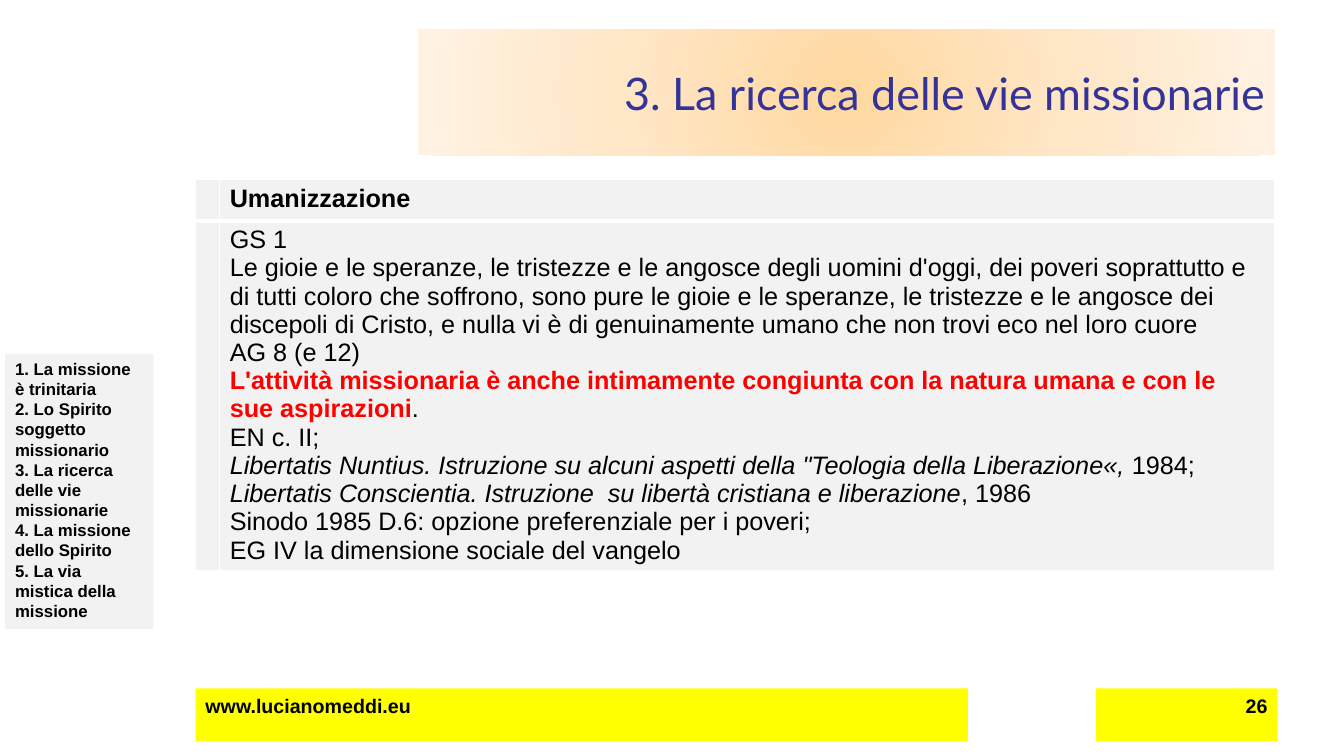
from dataclasses import dataclass

from lxml.etree import SubElement
from pptx import Presentation
from pptx.dml.color import RGBColor
from pptx.enum.shapes import MSO_SHAPE as Shape
from pptx.enum.text import MSO_ANCHOR as Anchor, PP_ALIGN as Align
from pptx.oxml import parse_xml
from pptx.oxml.ns import nsdecls, qn
from pptx.util import Inches, Length, Pt

WIDE, HIGH = Inches(13.33), Inches(7.5)
BLACK, WHITE, RED = "000000", "FFFFFF", "FF0000"
GREY, YELLOW, BLUE = "F2F2F2", "FFFF00", "333399"
GLOW = {0: "FFD8A0", 50: "FFE6C5", 100: "FFF2E3"}
LEFT, FOOT, BAR = 14.55, 91.07, 6.93
COLS, ROWS = (1.8, 78.47), (5.47, 46.27)


@dataclass
class Run:
    text: str
    bold: bool = False
    slant: bool = False
    color: str = BLACK


@dataclass
class Panel:
    """A filled box; its place is in percent of the slide."""
    left: float
    top: float
    wide: float
    high: float
    lines: list[str]
    size: int
    fill: str = YELLOW
    color: str = BLACK
    face: str = "Arial"
    bold: bool = True
    align: Align = Align.LEFT
    anchor: Anchor = Anchor.TOP


SIDE = Panel(0.38, 46.8, 11.03, 36.4, [
    "1. La missione è trinitaria",
    "2. Lo Spirito soggetto missionario",
    "3. La ricerca delle vie missionarie",
    "4. La missione dello Spirito",
    "5. La via mistica della missione",
], 12, fill=GREY)
TITLE = Panel(31.13, 3.87, 63.77, 16.67, ["3. La ricerca delle vie missionarie"], 32,
              color=BLUE, face="Lato", bold=False, align=Align.RIGHT, anchor=Anchor.MIDDLE)
SITE = Panel(LEFT, FOOT, 57.46, BAR, ["www.lucianomeddi.eu"], 14)
PAGE = Panel(81.55, FOOT, 13.5, BAR, ["26"], 14, align=Align.RIGHT)

HEAD = [[Run("Umanizzazione", bold=True)]]
BODY = [
    [Run("GS 1")],
    [Run("Le gioie e le speranze, le tristezze e le angosce degli uomini d'oggi, dei poveri "
         "soprattutto e di tutti coloro che soffrono, sono pure le gioie e le speranze, le "
         "tristezze e le angosce dei discepoli di Cristo, e nulla vi è di genuinamente umano "
         "che non trovi eco nel loro cuore")],
    [Run("AG 8 (e 12)")],
    [Run("L'attività missionaria è anche intimamente congiunta con la natura umana e con le "
         "sue aspirazioni", bold=True, color=RED), Run(".")],
    [Run("EN c. II;\n"),
     Run("Libertatis Nuntius. Istruzione su alcuni aspetti della \"Teologia della "
         "Liberazione«, ", slant=True), Run("1984;")],
    [Run("Libertatis Conscientia. Istruzione  su libertà cristiana e liberazione", slant=True),
     Run(", 1986\nSinodo 1985 D.6: opzione preferenziale per i poveri;")],
    [Run("EG IV la dimensione sociale del vangelo")],
]


def rgb(code: str) -> RGBColor:
    return RGBColor.from_string(code)


def across(share: float) -> Length:
    return Length(round(WIDE * share / 100))


def down(share: float) -> Length:
    return Length(round(HIGH * share / 100))


def style(font, size: int, color: str, face: str, bold: bool) -> None:
    font.size, font.name, font.bold = Pt(size), face, bold
    font.color.rgb = rgb(color)


def draw(slide, panel: Panel):
    box = slide.shapes.add_shape(Shape.RECTANGLE, across(panel.left), down(panel.top),
                                 across(panel.wide), down(panel.high))
    box.shadow.inherit = False
    box.fill.solid()
    box.fill.fore_color.rgb = rgb(panel.fill)
    box.line.fill.background()
    frame = box.text_frame
    frame.word_wrap = True
    frame.vertical_anchor = panel.anchor
    for i, line in enumerate(panel.lines):
        par = frame.paragraphs[0] if i == 0 else frame.add_paragraph()
        par.text, par.alignment = line, panel.align
        style(par.font, panel.size, panel.color, panel.face, panel.bold)
    return box


def glow(box) -> None:
    """Swap the plain fill for a round gradient from the centre."""
    stops = "".join(f'<a:gs pos="{pos * 1000}"><a:srgbClr val="{code}"/></a:gs>'
                    for pos, code in GLOW.items())
    fade = parse_xml(
        f'<a:gradFill {nsdecls("a")} rotWithShape="1"><a:gsLst>{stops}</a:gsLst>'
        '<a:path path="circle"><a:fillToRect l="50000" t="50000" r="50000" b="50000"/>'
        '</a:path></a:gradFill>')
    props = box.fill._xPr
    props.replace(props.find(qn("a:solidFill")), fade)


def edge(cell, base: int) -> None:
    """Give the cell white borders, the lower and upper ones of the set weights."""
    props = cell._tc.get_or_add_tcPr()
    top, low = (1, 3) if base == 0 else (3, 1)
    for i, (side, points) in enumerate({"L": 1, "R": 1, "T": top, "B": low}.items()):
        line = parse_xml(f'<a:ln{side} {nsdecls("a")} w="{Pt(points)}"/>')
        fill = SubElement(line, qn("a:solidFill"))
        SubElement(fill, qn("a:srgbClr"), val=WHITE)
        props.insert(i, line)


def write(par, runs: list[Run]) -> None:
    first = runs[0]
    style(par.font, 18, first.color, "Arial", first.bold)
    for item in runs:
        for i, part in enumerate(item.text.split("\n")):
            if i:
                par.add_line_break()
            if not part:
                continue
            run = par.add_run()
            run.text = part
            if len(runs) > 1:
                style(run.font, 18, item.color, "Arial", item.bold)
                run.font.italic = item.slant


def chart_text(slide) -> None:
    """Draw the table of sources."""
    table = slide.shapes.add_table(len(ROWS), len(COLS), across(LEFT), down(23.73),
                                   across(sum(COLS)), down(sum(ROWS))).table
    table.first_row = table.horz_banding = False
    for col, share in zip(table.columns, COLS):
        col.width = across(share)
    for r, (share, text) in enumerate(zip(ROWS, (HEAD, BODY))):
        table.rows[r].height = down(share)
        for cell in table.rows[r].cells:
            cell.fill.solid()
            cell.fill.fore_color.rgb = rgb(GREY)
            edge(cell, r)
        frame = table.cell(r, 1).text_frame
        for i, runs in enumerate(text):
            write(frame.paragraphs[0] if i == 0 else frame.add_paragraph(), runs)


def main() -> None:
    deck = Presentation()
    deck.slide_width, deck.slide_height = WIDE, HIGH
    slide = deck.slides.add_slide(deck.slide_layouts[6])
    draw(slide, SIDE)
    glow(draw(slide, TITLE))
    draw(slide, SITE)
    draw(slide, PAGE)
    chart_text(slide)
    deck.save("out.pptx")


if __name__ == "__main__":
    main()
